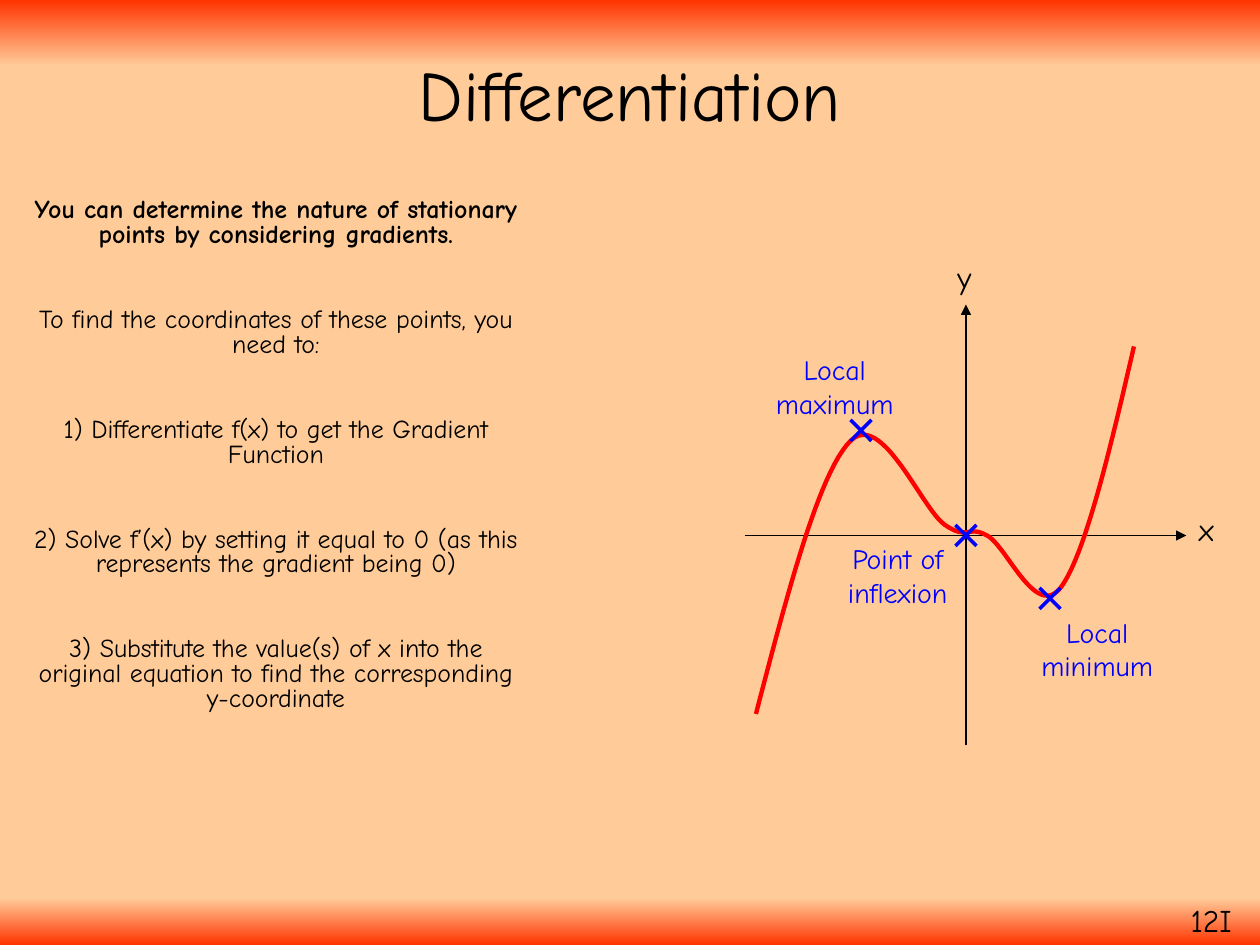
import lxml.etree
import pptx
import pptx.dml.color
import pptx.enum.shapes
import pptx.enum.text
import pptx.oxml.ns
import pptx.util

THEME = {
    "font": "Comic Neue",
    "ink": "000000", "curve": "FF0000", "note": "0000FF",
    "edge": "FF3300", "ground": "FFCC99",
    "title": 40.5, "body": 14.8, "label": 18, "caption": 16,
}
qn = pptx.oxml.ns.qn
align = pptx.enum.text.PP_ALIGN
anchor = pptx.enum.text.MSO_ANCHOR
fit = pptx.enum.text.MSO_AUTO_SIZE.SHAPE_TO_FIT_TEXT
rgb = pptx.dml.color.RGBColor.from_string

deck = pptx.Presentation()
deck.slide_width = pptx.util.Inches(10)
deck.slide_height = pptx.util.Inches(7.5)
page = deck.slides.add_slide(deck.slide_layouts[6])
column = deck.slide_width / 120
row = deck.slide_height / 90


def write_box(place, texts, size, color="ink", frame_format={}, para_format={}, gap=0, bold_first=False):
    left, top, width, height = place
    box = page.shapes.add_textbox(int(left * column), int(top * row), int(width * column), int(height * row))
    for name, value in {"word_wrap": True, **frame_format}.items():
        setattr(box.text_frame, name, value)
    for index, text in enumerate(texts):
        para = box.text_frame.paragraphs[0] if index == 0 else box.text_frame.add_paragraph()
        for name, value in para_format.items():
            setattr(para, name, value)
        if index:
            para.space_before = pptx.util.Pt(gap)
        span = para.add_run()
        span.text = text
        span.font.color.rgb = rgb(THEME[color])
        font_format = {"name": THEME["font"], "size": pptx.util.Pt(THEME[size]), "bold": bold_first and index == 0}
        for name, value in font_format.items():
            setattr(span.font, name, value)


def draw_line(shapes, start, end, color, width):
    line = shapes.add_connector(
        pptx.enum.shapes.MSO_CONNECTOR.STRAIGHT,
        int(start[0] * column), int(start[1] * row), int(end[0] * column), int(end[1] * row))
    line.line.color.rgb = rgb(THEME[color])
    line.line.width = pptx.util.Pt(width)
    lxml.etree.SubElement(line._element.spPr, qn("a:effectLst"))
    return line


page.background.fill.gradient()
page.background.fill.gradient_angle = 270
stops = page.element.xpath(".//a:gsLst")[0]
for stop in list(stops):
    stops.remove(stop)
for share, color in [(0, "edge"), (7, "ground"), (95, "ground"), (100, "edge")]:
    stop = lxml.etree.SubElement(stops, qn("a:gs"), pos=str(share * 1000))
    lxml.etree.SubElement(stop, qn("a:srgbClr"), val=THEME[color])

write_box((8.28, 2.88, 103.44, 13.08), ["Differentiation"], "title",
          frame_format={"vertical_anchor": anchor.MIDDLE},
          para_format={"alignment": align.CENTER, "line_spacing": 0.9})

steps = [
    "You can determine the nature of stationary points by considering gradients.",
    "To find the coordinates of these points, you need to:",
    "1) Differentiate f(x) to get the Gradient Function",
    "2) Solve f’(x) by setting it equal to 0 (as this represents the gradient being 0)",
    "3) Substitute the value(s) of x into the original equation to find the corresponding y-coordinate",
]
write_box((1.92, 18.36, 48.72, 57), steps, "body", gap=34.3, bold_first=True,
          para_format={"alignment": align.CENTER, "line_spacing": 0.8})

for text, left, top, width in [("12I", 112.2, 85.2, 7.32), ("y", 90, 24, 3.96), ("x", 113, 48, 4.2)]:
    write_box((left, top, width, 4.8), [text], "label", frame_format={"word_wrap": False, "auto_size": fit})

for start, end in [((92, 71), (92, 29)), ((71, 51), (113, 51))]:
    axis = draw_line(page.shapes, start, end, "ink", 0.75)
    lxml.etree.SubElement(axis.line._get_or_add_ln(), qn("a:tailEnd"), type="triangle")

bends = [
    [(72, 68), (75, 56.5), (78, 45), (81, 42)],
    [(81, 42), (84, 39), (87.8, 48.5), (90, 50)],
    [(90, 50), (92.2, 51.5), (92.2, 50), (94, 51)],
    [(94, 51), (95.9, 52), (98.6, 59), (101, 56)],
    [(101, 56), (103.3, 53), (105.7, 43), (108, 33)],
]
points = [bends[0][0]]
for bend in bends:
    for step in range(1, 25):
        t = step / 24
        weights = [(1 - t) ** 3, 3 * t * (1 - t) ** 2, 3 * t ** 2 * (1 - t), t ** 3]
        points.append([sum(weight * knot[side] for weight, knot in zip(weights, bend)) for side in (0, 1)])
outline = page.shapes.build_freeform(int(points[0][0] * column), int(points[0][1] * row))
outline.add_line_segments([(int(x * column), int(y * row)) for x, y in points[1:]], close=False)
curve = outline.convert_to_shape()
curve.shadow.inherit = False
curve.fill.background()
curve.line.color.rgb = rgb(THEME["curve"])
curve.line.width = pptx.util.Pt(2.5)

for x, y in [(82, 41), (92, 51), (100, 57)]:
    cross = page.shapes.add_group_shape()
    for rise in (1, -1):
        draw_line(cross.shapes, (x - 1, y - rise), (x + 1, y + rise), "note", 2)

for text, left, top in [("Local maximum", 71, 33), ("Local minimum", 96, 58), ("Point of inflexion", 77, 51)]:
    write_box((left, top, 17, 7.68), [text], "caption", "note",
              frame_format={"auto_size": fit}, para_format={"alignment": align.CENTER})

deck.save("out.pptx")
